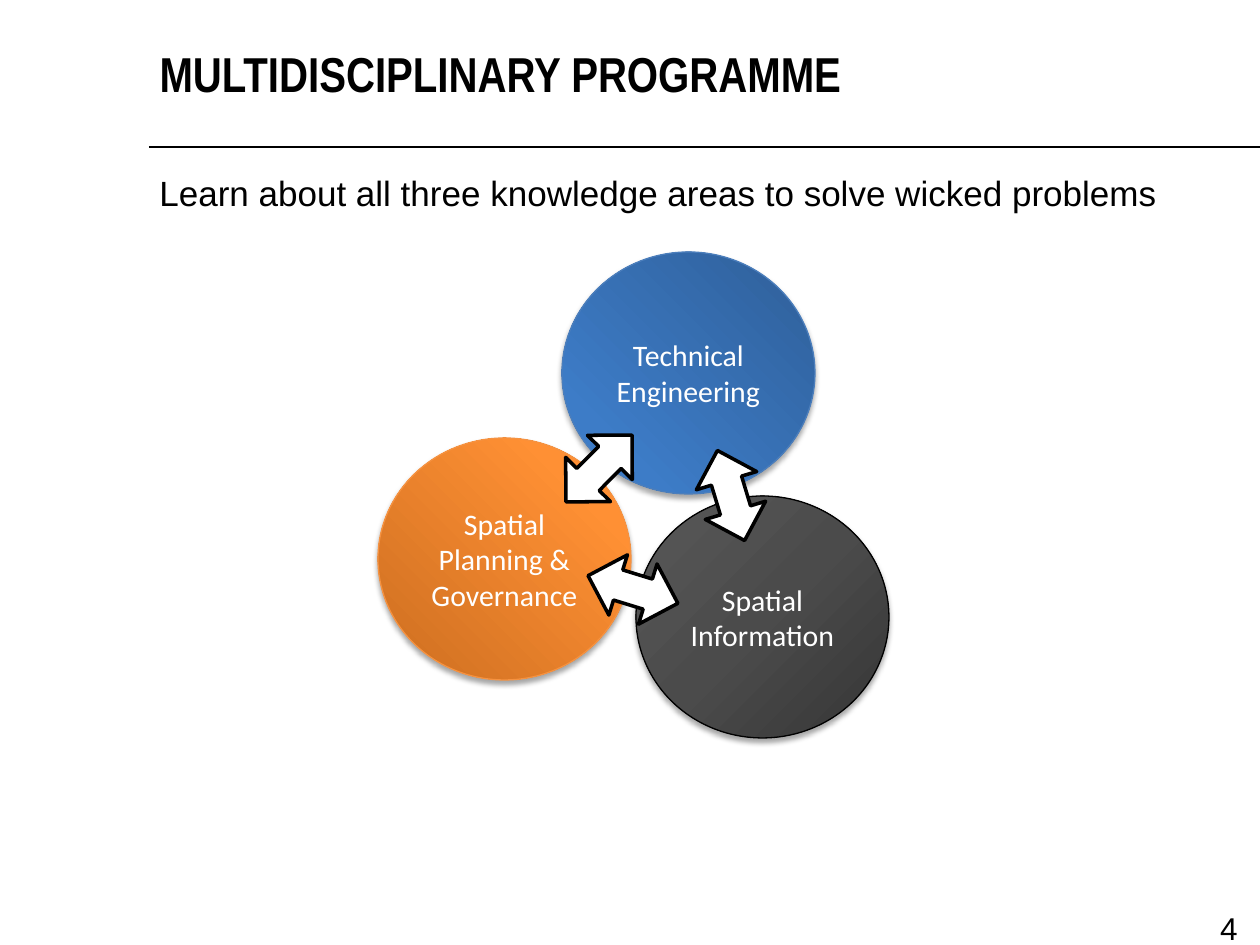
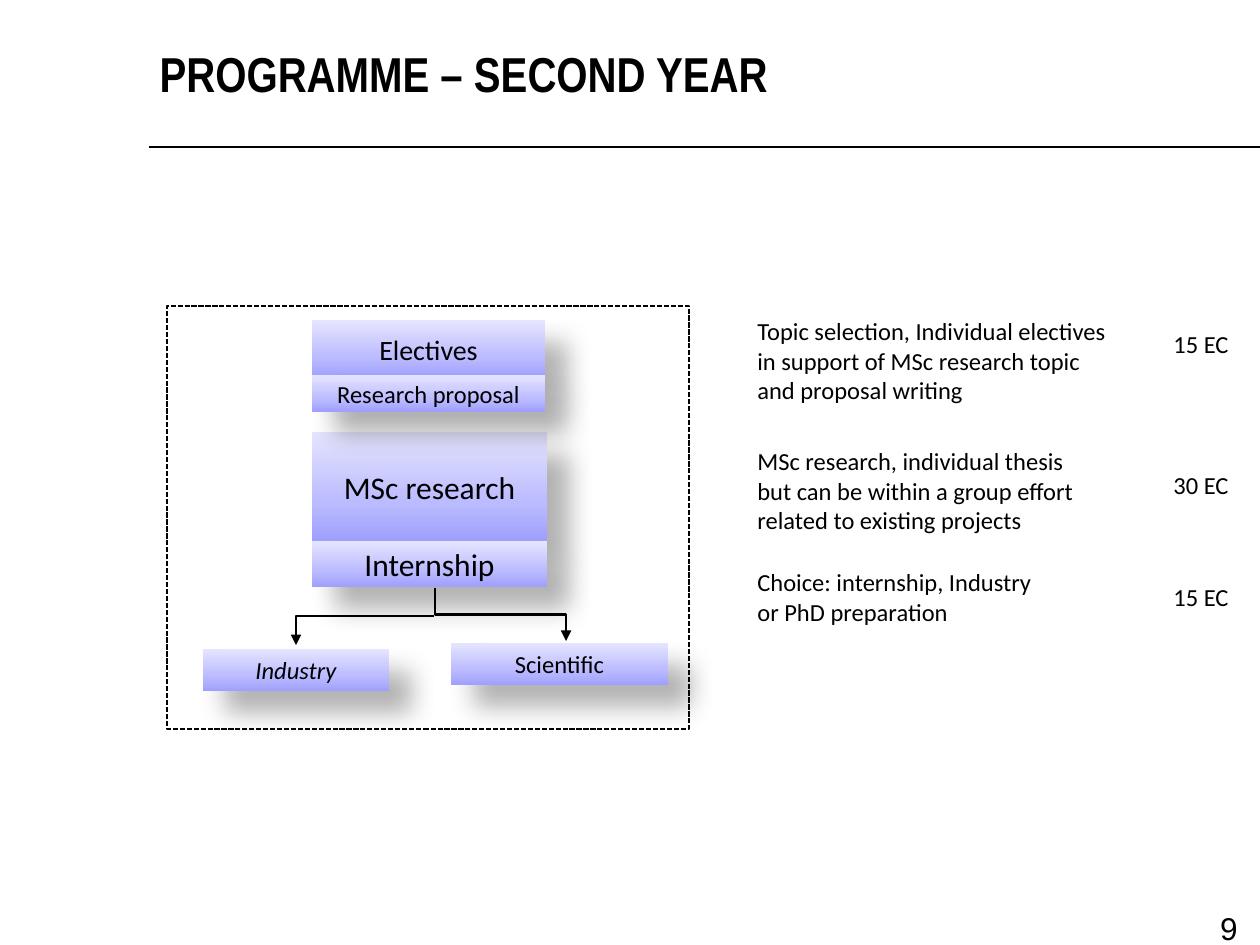
import collections

import lxml.etree
import pptx
import pptx.dml.color
import pptx.enum.dml
import pptx.enum.shapes
import pptx.enum.text
import pptx.oxml.ns
import pptx.util

RGB = pptx.dml.color.RGBColor
SHAPE = pptx.enum.shapes.MSO_SHAPE
ALIGN = pptx.enum.text.PP_ALIGN
ANCHOR = pptx.enum.text.MSO_ANCHOR
FIT = pptx.enum.text.MSO_AUTO_SIZE
qn = pptx.oxml.ns.qn

PX = pptx.util.Inches(1) / 126
BLACK = RGB(0x00, 0x00, 0x00)
WHITE = RGB(0xFF, 0xFF, 0xFF)
BLUE_EDGE = RGB(0x4B, 0x7E, 0xBC)
ORANGE_EDGE = RGB(0xF6, 0x92, 0x40)

Gradient = collections.namedtuple("Gradient", "angle stops")
BLUE = Gradient(135, [(0, RGB(0x2F, 0x5F, 0x99)), (80, RGB(0x3D, 0x7C, 0xC7)),
                      (100, RGB(0x3A, 0x7C, 0xCB))])
ORANGE = Gradient(315, [(0, RGB(0xCC, 0x6E, 0x20)), (80, RGB(0xFF, 0x90, 0x34)),
                        (100, RGB(0xFF, 0x91, 0x36))])
GREY = Gradient(225, [(0, RGB(0x35, 0x35, 0x35)), (50, RGB(0x4B, 0x4B, 0x4B)),
                      (100, RGB(0x59, 0x59, 0x59))])
LAVENDER = Gradient(270, [(0, RGB(0x9F, 0x9F, 0xFF)), (35, RGB(0xBB, 0xBB, 0xFF)),
                          (100, RGB(0xE5, 0xE5, 0xFF))])

Shadow = collections.namedtuple("Shadow", "opacity blur distance angle")
SOFT_SHADOW = Shadow(35, 3.1, 1.8, 90)
DEEP_SHADOW = Shadow(30, 15, 18, 45)

TITLE_FONT = {"name": "Arial Narrow", "size": pptx.util.Pt(28), "bold": True}
LEAD_FONT = {"name": "Arial", "size": pptx.util.Pt(20)}
NUMBER_FONT = {"name": "Arial", "size": pptx.util.Pt(18)}
CIRCLE_FONT = {"name": "Calibri", "size": pptx.util.Pt(17)}
NOTE_FONT = {"name": "Calibri", "size": pptx.util.Pt(14)}


class Box(collections.namedtuple("Box", "left top width height")):
    def inside(self, left, top, width, height):
        """Box placed relative to this one's top left corner."""
        return Box(self.left + left, self.top + top, width, height)

    def emu(self):
        return [round(length * PX) for length in self]


def write(frame, lines, font, color=BLACK, align=ALIGN.LEFT, **frame_format):
    for name, value in frame_format.items():
        setattr(frame, name, value)
    for index, line in enumerate(lines):
        para = frame.add_paragraph() if index else frame.paragraphs[0]
        para.alignment = align
        span = para.add_run()
        span.text = line
        span.font.color.rgb = color
        for name, value in font.items():
            setattr(span.font, name, value)


def add_text(page, box, text, font, align=ALIGN.LEFT, wrap=True):
    frame = page.shapes.add_textbox(*box.emu()).text_frame
    write(frame, [text], font, align=align, word_wrap=wrap,
          auto_size=FIT.NONE if wrap else FIT.SHAPE_TO_FIT_TEXT)


def add_child(parent, tag, **attributes):
    child = lxml.etree.SubElement(parent, qn(tag))
    for name, value in attributes.items():
        child.set(name, str(value))
    return child


def paint_gradient(shape, gradient):
    shape.fill.gradient()
    fill = shape.element.spPr.find(qn("a:gradFill"))
    for child in list(fill):
        fill.remove(child)
    stops = add_child(fill, "a:gsLst")
    for position, color in gradient.stops:
        stop = add_child(stops, "a:gs", pos=position * 1000)
        add_child(stop, "a:srgbClr", val=color)
    add_child(fill, "a:lin", ang=gradient.angle * 60000, scaled=0)


def cast_shadow(shape, shadow):
    effects = shape.element.spPr.find(qn("a:effectLst"))
    outer = add_child(effects, "a:outerShdw", blurRad=pptx.util.Pt(shadow.blur),
                      dist=pptx.util.Pt(shadow.distance), dir=shadow.angle * 60000,
                      algn="ctr", rotWithShape=0)
    color = add_child(outer, "a:srgbClr", val=BLACK)
    add_child(color, "a:alpha", val=shadow.opacity * 1000)


def add_figure(page, kind, box, fill=None, edge=None, weight=1, shadow=None):
    """Preset shape with a plain, gradient or no fill."""
    shape = page.shapes.add_shape(kind, *box.emu())
    shape.shadow.inherit = False
    if isinstance(fill, Gradient):
        paint_gradient(shape, fill)
    elif fill is None:
        shape.fill.background()
    else:
        shape.fill.solid()
        shape.fill.fore_color.rgb = fill
    if edge is None:
        shape.line.fill.background()
    else:
        shape.line.color.rgb = edge
        shape.line.width = pptx.util.Pt(weight)
    if shadow:
        cast_shadow(shape, shadow)
    return shape


def add_line(page, kind, box, weight):
    left, top, width, height = box.emu()
    line = page.shapes.add_connector(kind, left, top, left + width, top + height)
    line.line.color.rgb = BLACK
    line.line.width = pptx.util.Pt(weight)
    add_child(line.element.spPr, "a:effectLst")
    return line


def add_elbow_arrow(page, box, preset, rotation, flip):
    arrow = add_line(page, pptx.enum.shapes.MSO_CONNECTOR.ELBOW, box, 1.5)
    properties = arrow.element.spPr
    properties.find(qn("a:prstGeom")).set("prst", preset)
    frame = properties.find(qn("a:xfrm"))
    frame.set("rot", str(rotation * 60000))
    frame.set(flip, "1")
    add_child(properties.find(qn("a:ln")), "a:tailEnd", type="triangle")


def add_page(deck, title, number):
    """Page with the shared title, rule and page number."""
    page = deck.slides.add_slide(deck.slide_layouts[5])
    heading = page.shapes.title
    (heading.left, heading.top,
     heading.width, heading.height) = Box(147, 13, 1071, 120).emu()
    write(heading.text_frame, [title], TITLE_FONT, auto_size=FIT.NONE,
          vertical_anchor=ANCHOR.MIDDLE)
    add_line(page, pptx.enum.shapes.MSO_CONNECTOR.STRAIGHT, Box(149, 147, 1112, 0), 1)
    add_text(page, Box(1180, 903, 70, 43), str(number), NUMBER_FONT, ALIGN.RIGHT)
    return page


def draw_knowledge_areas(page, area):
    """Three circles joined by double arrows."""
    circles = [
        (184, 0, BLUE, BLUE_EDGE, ["Technical Engineering"]),
        (0, 186, ORANGE, ORANGE_EDGE, ["Spatial Planning &", "Governance"]),
        (258, 244, GREY, BLACK, ["Spatial", "Information"]),
    ]
    for left, top, fill, edge, lines in circles:
        circle = add_figure(page, SHAPE.OVAL, area.inside(left, top, 253, 242),
                            fill, edge, 0.75, SOFT_SHADOW)
        write(circle.text_frame, lines, CIRCLE_FONT, WHITE, ALIGN.CENTER,
              word_wrap=True, vertical_anchor=ANCHOR.MIDDLE)
    for left, top, rotation in [(174, 185, 314.7), (306, 212, 253.2), (208, 306, 197.1)]:
        arrow = add_figure(page, SHAPE.LEFT_RIGHT_ARROW,
                           area.inside(left, top, 94, 63), WHITE, BLACK, 2)
        arrow.rotation = rotation


def draw_year_plan(page, area):
    """Dashed frame with the blocks of the year and the two internship routes."""
    frame = add_figure(page, SHAPE.RECTANGLE, area, edge=BLACK)
    frame.line.dash_style = pptx.enum.dml.MSO_LINE.SQUARE_DOT
    add_elbow_arrow(page, area.inside(129, 310, 138, 29), "bentConnector2", 180, "flipV")
    add_elbow_arrow(page, area.inside(307, 243, 53, 131), "bentConnector3", 270, "flipH")
    blocks = [
        ("MSc research", 18, 145, 126, 235, 109),
        ("Industry", 14, 36, 343, 186, 42),
        ("Scientific", 14, 284, 337, 217, 42),
        ("Electives", 16, 145, 14, 233, 58),
        ("Research proposal", 14, 145, 69, 233, 37),
        ("Internship", 18, 145, 235, 235, 46),
    ]
    for label, size, *place in blocks:
        block = add_figure(page, SHAPE.RECTANGLE, area.inside(*place), LAVENDER,
                           shadow=DEEP_SHADOW)
        font = {"name": "Calibri", "size": pptx.util.Pt(size),
                "italic": label == "Industry"}
        write(block.text_frame, [label], font, align=ALIGN.CENTER, word_wrap=True,
              vertical_anchor=ANCHOR.MIDDLE)


def list_credits(page, area):
    """Explanations with their credits at the right."""
    rows = [
        ("Topic selection, Individual electives in support of MSc research topic "
         "and proposal writing", 0, 376, 102, "15 EC", 13),
        ("MSc research, individual thesis but can be within a group effort "
         "related to existing projects", 130, 353, 102, "30 EC", 154),
        ("Choice: internship, Industry or PhD preparation",
         251, 304, 72, "15 EC", 266),
    ]
    for text, top, width, height, credit, credit_top in rows:
        add_text(page, area.inside(0, top, width, height), text, NOTE_FONT)
        add_text(page, area.inside(416, credit_top, 81, 43), credit, NOTE_FONT, wrap=False)


def main():
    deck = pptx.Presentation()
    deck.slide_width = pptx.util.Inches(10)
    deck.slide_height = pptx.util.Inches(7.5)

    page = add_page(deck, "MULTIDISCIPLINARY PROGRAMME", 4)
    draw_knowledge_areas(page, Box(378, 252, 511, 486))
    add_text(page, Box(147, 165, 1031, 55),
             "Learn about all three knowledge areas to solve wicked problems",
             LEAD_FONT, wrap=False)

    page = add_page(deck, "PROGRAMME – SECOND YEAR", 9)
    draw_year_plan(page, Box(167, 306, 522, 423))
    list_credits(page, Box(745, 310, 497, 323))

    deck.save("out.pptx")


if __name__ == "__main__":
    main()
